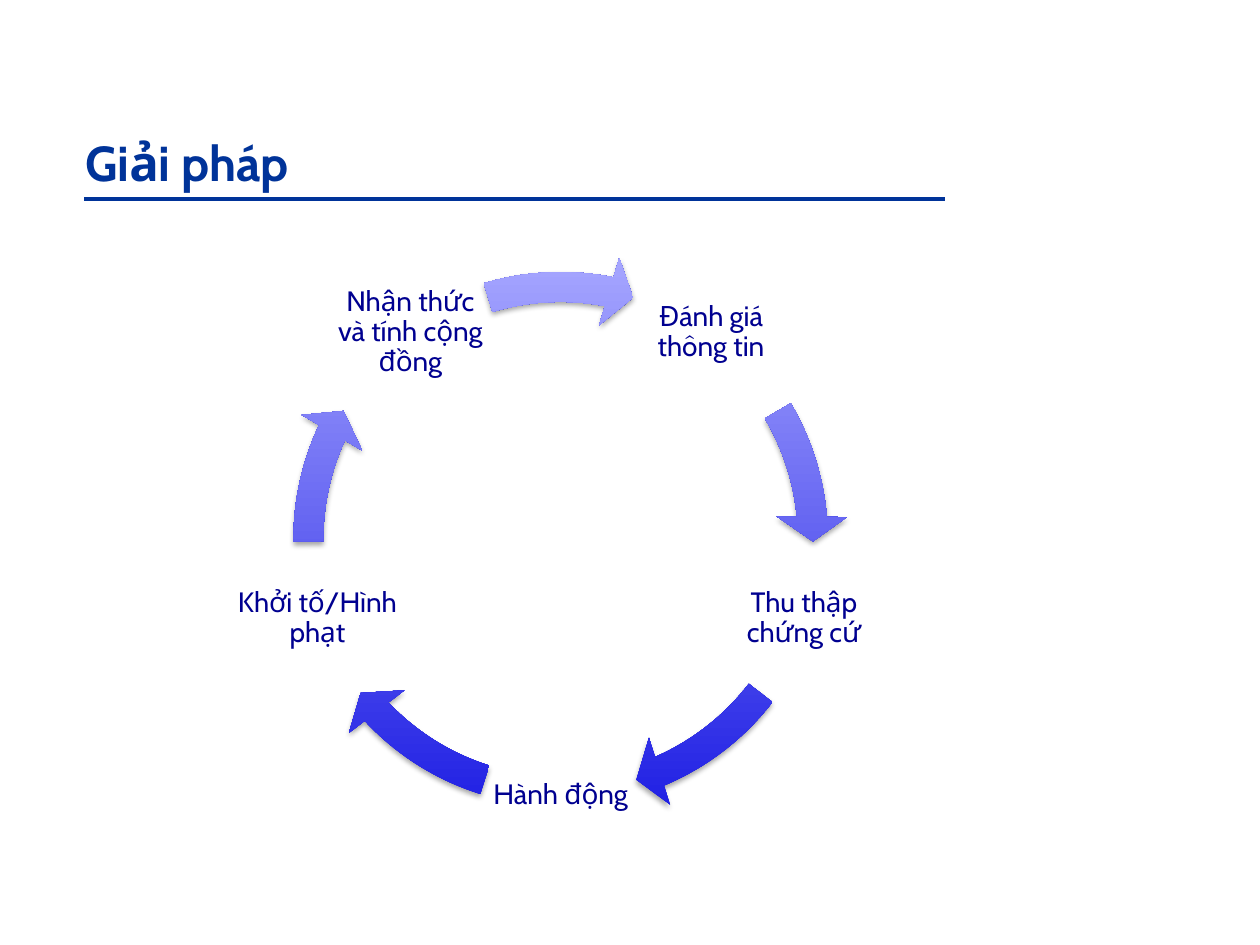
import math

from lxml import etree
from pptx import Presentation
from pptx import util as u
from pptx.dml.color import RGBColor
from pptx.enum import shapes, text
from pptx.oxml import parse_xml
from pptx.oxml.ns import nsdecls, qn

COLORS = {"title": "003399", "label": "000090", "dark": "1C1CE3", "light": "A7A7FF"}
FONT = "Cabin"

# Label, label width, start and end angle of the arrow that follows it
STEPS = [
    ("Đánh giá thông tin", 1.22, 329.43, 354.9),
    ("Thu thập chứng cứ", 1.22, 37.55, 66.92),
    ("Hành động", 1.22, 107.49, 136.85),
    ("Khởi tố/Hình phạt", 1.35, 179.51, 204.97),
    ("Nhận thức và tính cộng đồng", 1.22, 253.3, 281.1),
]


def rgb(name):
    return RGBColor.from_string(COLORS[name])


def add_text(slide, box, content, size, color, bold=False, margins=None,
             align=text.PP_ALIGN.LEFT, anchor=text.MSO_ANCHOR.TOP,
             line_spacing=None, space_after=None):
    shape = slide.shapes.add_textbox(*map(u.Inches, box))
    frame = shape.text_frame
    frame.word_wrap = True
    frame.vertical_anchor = anchor
    if margins is not None:
        frame.margin_left = frame.margin_right = u.Inches(margins)
        frame.margin_top = frame.margin_bottom = u.Inches(margins)
    paragraph = frame.paragraphs[0]
    paragraph.alignment = align
    paragraph.line_spacing = line_spacing
    paragraph.space_after = space_after
    run = paragraph.add_run()
    run.text = content
    run.font.name = FONT
    run.font.size = u.Pt(size)
    run.font.bold = bold
    run.font.color.rgb = rgb(color)


def add_title(slide, left, top, width, height):
    add_text(slide, (left, top, width, height), "Giải pháp", 28, "title", bold=True)
    # Rule under the title
    rule_y = u.Inches(top + 0.58)
    rule = slide.shapes.add_connector(
        shapes.MSO_CONNECTOR.STRAIGHT,
        u.Inches(left + 0.09), rule_y, u.Inches(left + 6.92), rule_y)
    rule.line.color.rgb = rgb("title")
    rule.line.width = u.Pt(2)
    etree.SubElement(rule._element.spPr, qn("a:effectLst"))


def add_arrow(slide, left, top, size, start, end):
    arrow = slide.shapes.add_shape(
        shapes.MSO_SHAPE.CIRCULAR_ARROW, *map(u.Inches, (left, top, size, size)))
    # Angles are stored in 60000ths of a degree, adjustments in 100000ths
    values = (0.052, 5.6 * 0.6, end * 0.6, start * 0.6, 0.061)
    for index, value in enumerate(values):
        arrow.adjustments[index] = value
    arrow.line.fill.background()
    arrow.fill.gradient()
    arrow.fill.gradient_angle = 90
    for stop, color in zip(arrow.fill.gradient_stops, ("dark", "light")):
        stop.color.rgb = rgb(color)
    # Soft shadow below the arrow
    arrow._element.spPr.append(parse_xml(
        f'<a:effectLst {nsdecls("a")}>'
        f'<a:outerShdw blurRad="{u.Pt(3.1)}" dist="{u.Pt(1.8)}" dir="5400000" rotWithShape="0">'
        '<a:srgbClr val="000000"><a:alpha val="35000"/></a:srgbClr>'
        '</a:outerShdw></a:effectLst>'))


def add_cycle(slide, left, top, size):
    center_x, center_y = left + size / 2, top + size / 2
    radius, label_height = 2.03, 1.22
    for index, (label, width, start, end) in enumerate(STEPS):
        # Labels sit on the corners of a pentagon
        angle = math.radians(-54 + index * 360 / len(STEPS))
        x = center_x + radius * math.cos(angle) - width / 2
        y = center_y + radius * math.sin(angle) - label_height / 2
        add_text(slide, (x, y, width, label_height), label, 16, "label",
                 margins=0.02, align=text.PP_ALIGN.CENTER,
                 anchor=text.MSO_ANCHOR.MIDDLE,
                 line_spacing=0.9, space_after=u.Pt(5.6))
        add_arrow(slide, left, top, size, start, end)


def main():
    presentation = Presentation()
    presentation.slide_width = u.Inches(10)
    presentation.slide_height = u.Inches(7.5)
    slide = presentation.slides.add_slide(presentation.slide_layouts[6])
    add_title(slide, 0.58, 1, 7.17, 0.57)
    add_cycle(slide, 2.17, 2, 4.56)
    presentation.save("out.pptx")


if __name__ == "__main__":
    main()
